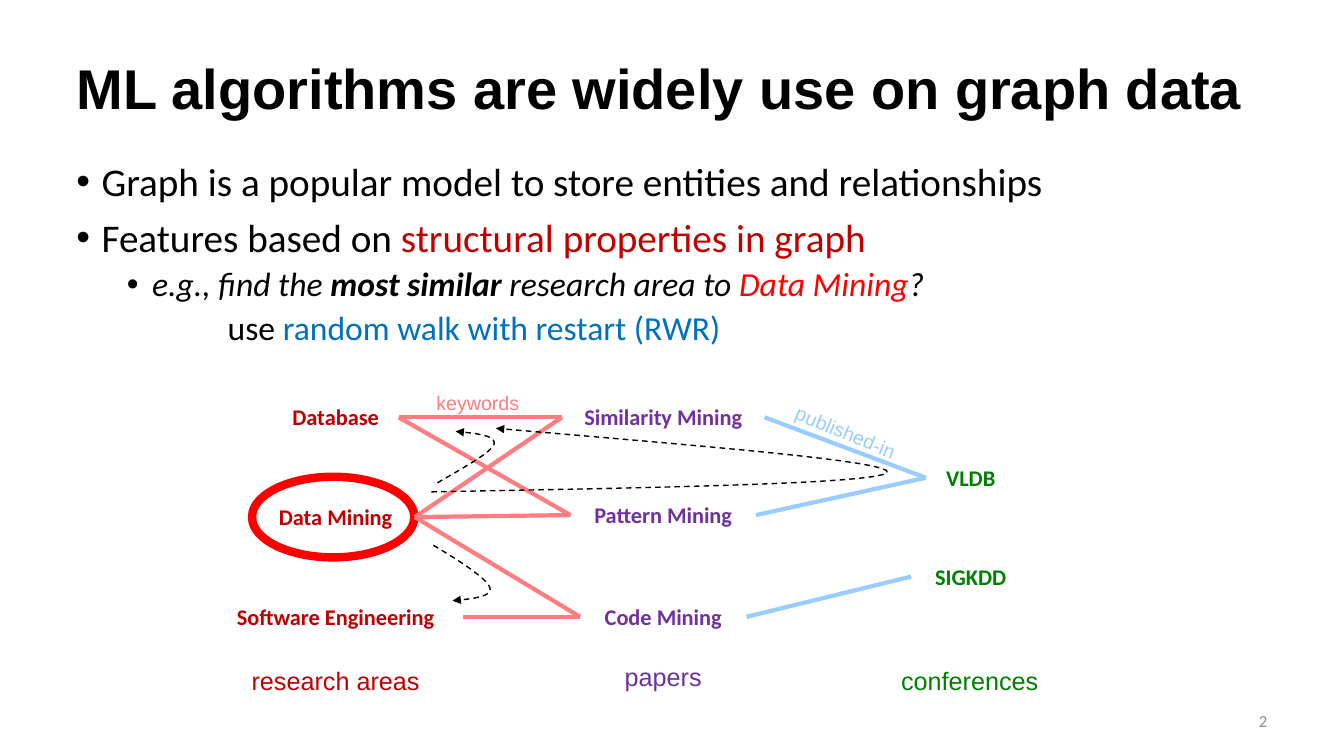
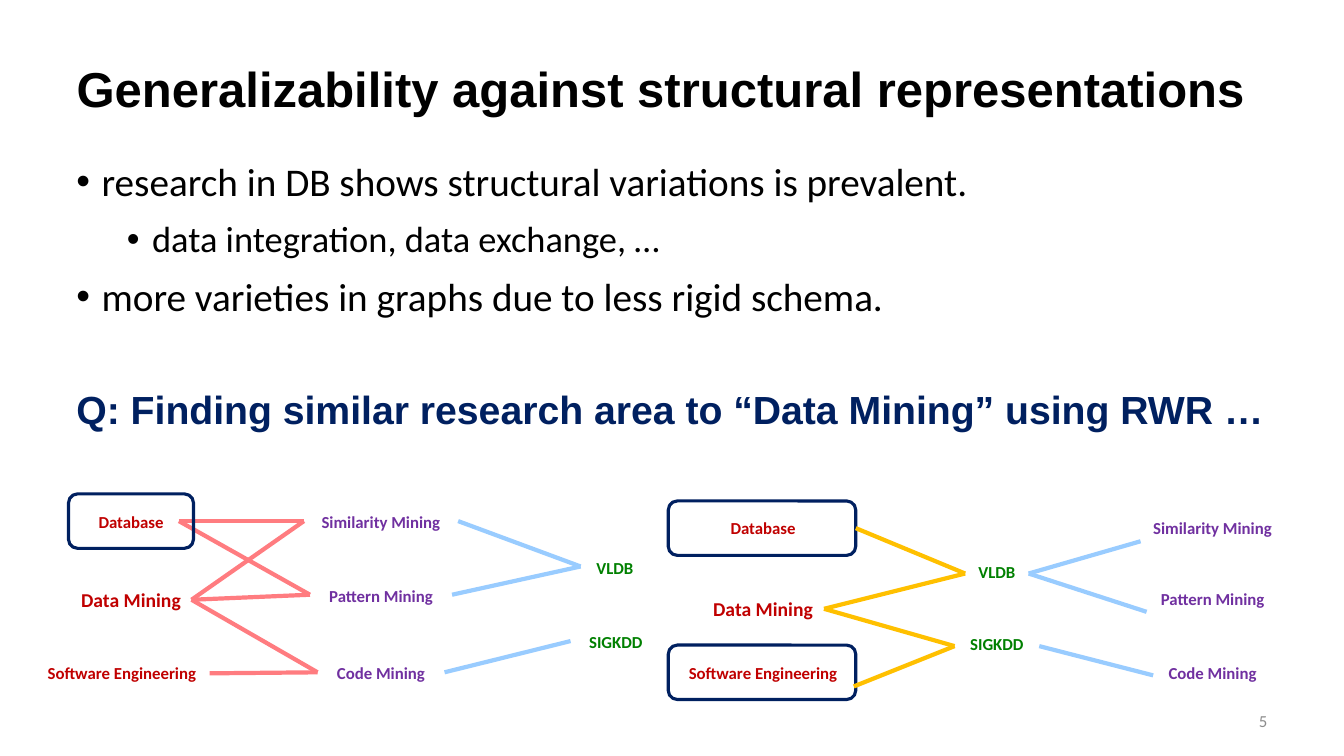
"""Builds two slides on graph data, each with a title, bullets and node graphs."""
from dataclasses import dataclass
from typing import NamedTuple

from pptx import Presentation
from pptx.dml.color import RGBColor as Rgb
from pptx.enum.dml import MSO_LINE as Dash
from pptx.enum.shapes import MSO_CONNECTOR as Conn, MSO_SHAPE as Kind
from pptx.enum.text import MSO_ANCHOR as Anchor, MSO_AUTO_SIZE as Auto, PP_ALIGN as Align
from pptx.oxml.ns import qn
from pptx.shapes.base import BaseShape
from pptx.slide import Slide
from pptx.text.text import _Paragraph as Para, _Run as Run
from pptx.util import Inches, Pt
from lxml.etree import SubElement as Sub

CELL = Inches(0.1)
COLS, ROWS = 133.33, 75
LEFT, WIDE = 6.6, 120.1
HUES = {
    "black": "000000", "gray": "8C8C8C", "area": "C00000", "paper": "7030A0",
    "venue": "008000", "red": "FF0000", "blue": "0070C0", "navy": "002060",
    "pink": "FF7C80", "sky": "99CCFF", "gold": "FFC000",
}


class Spot(NamedTuple):
    x: float
    y: float


@dataclass(frozen=True)
class Bit:
    text: str
    hue: str = "black"
    bold: bool = False
    slant: bool = False
    font: str = "Calibri"


@dataclass(frozen=True)
class Item:
    bits: tuple[Bit, ...]
    size: int = 28
    gap: int = 10
    margin: float = 0.25
    dot: bool = True


@dataclass(frozen=True)
class Node:
    text: str
    x: float
    y: float
    wide: float
    tall: float
    hue: str
    size: int


@dataclass(frozen=True)
class Edge:
    start: str
    end: str
    hue: str


@dataclass(frozen=True)
class Note(Node):
    turn: float = 0


@dataclass(frozen=True)
class Frame:
    x: float
    y: float
    wide: float
    tall: float = 5.4


DB, DM, SE = "Database", "Data Mining", "Software Engineering"
SIM, PAT, CODE = "Similarity Mining", "Pattern Mining", "Code Mining"
VLDB, KDD = "VLDB", "SIGKDD"

EDGES = (
    Edge(DB, SIM, "pink"), Edge(DM, SIM, "pink"), Edge(SE, CODE, "pink"),
    Edge(DM, CODE, "pink"), Edge(DM, PAT, "pink"), Edge(SIM, VLDB, "sky"),
    Edge(PAT, VLDB, "sky"), Edge(CODE, KDD, "sky"), Edge(DB, PAT, "pink"),
)
FLIPS = (
    Edge(DM, VLDB, "gold"), Edge(DM, KDD, "gold"), Edge(VLDB, SIM, "sky"),
    Edge(VLDB, PAT, "sky"), Edge(KDD, CODE, "sky"),
)

MAIN = (
    Node(DB, 33.3, 41.4, 12.5, 3.7, "area", 16),
    Node(DM, 33.3, 51.3, 15.7, 3.7, "area", 16),
    Node(SE, 33.3, 61.2, 25.2, 3.7, "area", 16),
    Node(SIM, 65.8, 41.4, 20.1, 3.7, "paper", 16),
    Node(PAT, 65.8, 51.1, 18.4, 3.7, "paper", 16),
    Node(CODE, 65.8, 61.2, 16.5, 3.7, "paper", 16),
    Node(VLDB, 96.3, 47.4, 8.9, 3.7, "venue", 16),
    Node(KDD, 96.3, 57.2, 11.8, 3.7, "venue", 16),
)
FORM = (
    Node(DB, 13, 51.7, 9.5, 2.8, "area", 12),
    Node(DM, 13, 59.5, 12, 3.4, "area", 14),
    Node(SE, 12.1, 66.8, 17.4, 3, "area", 12),
    Node(SIM, 37.8, 51.7, 15.3, 2.8, "paper", 12),
    Node(PAT, 37.8, 59, 14.1, 2.8, "paper", 12),
    Node(CODE, 37.8, 66.7, 12.6, 2.8, "paper", 12),
    Node(VLDB, 61, 56.2, 6.8, 2.8, "venue", 12),
    Node(KDD, 61.1, 63.6, 9, 2.8, "venue", 12),
)
TWIN = (
    Node(DB, 75.7, 53.7, 8.9, 5.6, "area", 12),
    Node(DM, 75.7, 60.4, 12.1, 3.4, "area", 14),
    Node(SE, 75.7, 68.1, 17.9, 5.6, "area", 12),
    Node(SIM, 120.3, 53.7, 14.3, 5.6, "paper", 12),
    Node(PAT, 120.3, 60.7, 13.1, 5.6, "paper", 12),
    Node(CODE, 120.3, 67, 11.8, 3.4, "paper", 12),
    Node(VLDB, 98.9, 56.9, 6.3, 3.4, "venue", 12),
    Node(KDD, 98.9, 64.1, 8.4, 3.4, "venue", 12),
)
NOTES = (
    Note("research areas", 33.3, 67.5, 20.4, 4, "area", 18),
    Note("papers", 65.8, 67.1, 20.4, 4, "paper", 18),
    Note("conferences", 96.2, 67.5, 20.4, 4, "venue", 18),
    Note("keywords", 47.4, 40, 14.5, 3.4, "pink", 14),
    Note("published-in", 83.9, 42.9, 14.5, 3.4, "sky", 14, 22.6),
)
WALKS = (
    (Spot(43.4, 47.9), Spot(46, 46.4), Spot(48.7, 44.9), Spot(49, 44.1),
     Spot(49.3, 43.2), Spot(47.3, 43), Spot(45.2, 42.8)),
    (Spot(42.8, 48.8), Spot(64.8, 48.4), Spot(86.9, 48), Spot(88, 46.9),
     Spot(89.1, 45.8), Spot(69.1, 44.2), Spot(49.2, 42.5)),
    (Spot(43, 54.1), Spot(45.7, 55.7), Spot(48.3, 57.4), Spot(48.6, 58.3),
     Spot(48.9, 59.2), Spot(46.9, 59.4), Spot(44.9, 59.6)),
)
USES = (
    Item((Bit("Graph is a popular model to store entities and relationships"),)),
    Item((Bit("Features based on "), Bit("structural properties in graph", "area"))),
    Item((Bit("e.g., find the ", slant=True), Bit("most similar ", bold=True, slant=True),
          Bit("research area to ", slant=True), Bit("Data Mining", "red", slant=True),
          Bit("?", slant=True)), 24, 5, 0.75),
    Item((Bit("use "), Bit("random walk with restart (RWR)", "blue")), 24, 5, 1.5, False),
)
FORMS = (
    Item((Bit("research in DB shows structural variations is prevalent."),), gap=12),
    Item((Bit("data integration, data exchange, …"),), 26, 12, 0.75),
    Item((Bit("more varieties in graphs due to less rigid schema."),), gap=12),
    Item((Bit("Q: Finding similar research area to “Data Mining” using RWR …",
              "navy", True, font="Arial"),), gap=51, margin=0, dot=False),
)


def cell(num: float) -> int:
    return round(num * CELL)


def tint(name: str) -> Rgb:
    return Rgb.from_string(HUES[name])


def style(run: Run, size: int, hue: str, font: str = "Calibri",
          bold: bool = False, slant: bool = False) -> None:
    face = run.font
    face.size, face.name, face.bold, face.italic = Pt(size), font, bold, slant
    face.color.rgb = tint(hue)


def text_at(page: Slide, x: float, y: float, wide: float, tall: float) -> BaseShape:
    box = page.shapes.add_textbox(cell(x), cell(y), cell(wide), cell(tall))
    box.text_frame.word_wrap = True
    return box


def label(page: Slide, mark: Node, font: str, bold: bool) -> BaseShape:
    box = text_at(page, mark.x - mark.wide / 2, mark.y - mark.tall / 2, mark.wide, mark.tall)
    box.text_frame.text = mark.text
    para = box.text_frame.paragraphs[0]
    para.alignment = Align.CENTER
    style(para.runs[0], mark.size, mark.hue, font, bold)
    return box


def outline(page: Slide, kind: Kind, spot: Frame, hue: str, width: float) -> BaseShape:
    shape = page.shapes.add_shape(
        kind, cell(spot.x), cell(spot.y), cell(spot.wide), cell(spot.tall))
    shape.shadow.inherit = False
    shape.fill.background()
    shape.line.color.rgb, shape.line.width = tint(hue), Pt(width)
    return shape


def link(page: Slide, start: BaseShape | Spot, end: BaseShape, hue: str) -> None:
    from_x, from_y = (cell(start.x), cell(start.y)) if isinstance(start, Spot) else (0, 0)
    line = page.shapes.add_connector(Conn.STRAIGHT, from_x, from_y, 0, 0)
    if not isinstance(start, Spot):
        line.begin_connect(start, 3)
    line.end_connect(end, 1)
    line.line.color.rgb, line.line.width = tint(hue), Pt(3)
    Sub(line._element.spPr, qn("a:effectLst"))


def graph(page: Slide, nodes: tuple[Node, ...], edges: tuple[Edge, ...]) -> dict[str, BaseShape]:
    boxes = {node.text: label(page, node, "Calibri", True) for node in nodes}
    for edge in edges:
        link(page, boxes[edge.start], boxes[edge.end], edge.hue)
    return boxes


def bend(a: Spot, b: Spot, c: Spot, d: Spot, steps: int = 16) -> list[tuple[int, int]]:
    dots = []
    for step in range(1, steps + 1):
        t = step / steps
        mix = ((1 - t) ** 3, 3 * t * (1 - t) ** 2, 3 * t * t * (1 - t), t ** 3)
        dots.append((cell(sum(m * p.x for m, p in zip(mix, (a, b, c, d)))),
                     cell(sum(m * p.y for m, p in zip(mix, (a, b, c, d))))))
    return dots


def walk(page: Slide, knots: tuple[Spot, ...]) -> None:
    pen = page.shapes.build_freeform(cell(knots[0].x), cell(knots[0].y))
    pen.add_line_segments(bend(*knots[:4]) + bend(*knots[3:]), close=False)
    curve = pen.convert_to_shape()
    curve.shadow.inherit = False
    curve.fill.background()
    curve.line.color.rgb, curve.line.width = tint("black"), Pt(1)
    curve.line.dash_style = Dash.DASH
    Sub(curve.line._get_or_add_ln(), qn("a:tailEnd"), type="triangle")


def bullet(para: Para, item: Item) -> None:
    para.line_spacing, para.space_before = 0.9, Pt(item.gap)
    props = para._p.get_or_add_pPr()
    props.set("marL", str(Inches(item.margin)))
    props.set("indent", str(Inches(-0.25 if item.dot else 0)))
    if item.dot:
        Sub(props, qn("a:buFont"), typeface="Arial")
        Sub(props, qn("a:buChar"), char="•")
    for bit in item.bits:
        run = para.add_run()
        run.text = bit.text
        style(run, item.size, bit.hue, bit.font, bit.bold, bit.slant)


def start(deck: Presentation, title: str, size: int, items: tuple[Item, ...], num: str) -> Slide:
    page = deck.slides.add_slide(deck.slide_layouts[5])
    head = page.shapes.title
    head.left, head.top, head.width, head.height = map(cell, (LEFT, 4, WIDE, 10.1))
    frame = head.text_frame
    frame.text = title
    frame.word_wrap, frame.auto_size, frame.vertical_anchor = True, Auto.NONE, Anchor.MIDDLE
    para = frame.paragraphs[0]
    para.alignment, para.line_spacing = Align.LEFT, 0.9
    style(para.runs[0], size, "black", "Arial", True)
    body = text_at(page, LEFT, 15.6, WIDE, 52).text_frame
    for rank, item in enumerate(items):
        bullet(body.add_paragraph() if rank else body.paragraphs[0], item)
    foot = text_at(page, LEFT + WIDE - 32.5, 69.5, 32.5, 4).text_frame
    foot.text, foot.vertical_anchor = num, Anchor.MIDDLE
    foot.paragraphs[0].alignment = Align.RIGHT
    style(foot.paragraphs[0].runs[0], 12, "gray")
    return page


def main() -> None:
    deck = Presentation()
    deck.slide_width, deck.slide_height = cell(COLS), cell(ROWS)

    page = start(deck, "ML algorithms are widely use on graph data", 40, USES, "2")
    outline(page, Kind.OVAL, Frame(25, 47.3, 16.1, 8), "red", 6)
    for note in NOTES:
        label(page, note, "Arial", False).rotation = note.turn
    graph(page, MAIN, EDGES)
    for knots in WALKS:
        walk(page, knots)

    page = start(deck, "Generalizability against structural representations", 35, FORMS, "5")
    boxes = graph(page, TWIN, FLIPS)
    graph(page, FORM, EDGES)
    spots = (Frame(6.8, 49, 12.4), Frame(66.3, 64, 18.6), Frame(66.3, 49.7, 18.6))
    *_, top = [outline(page, Kind.ROUNDED_RECTANGLE, spot, "navy", 2.25) for spot in spots]
    link(page, top, boxes[VLDB], "gold")
    link(page, Spot(84.7, 68.1), boxes[KDD], "gold")
    deck.save("out.pptx")


if __name__ == "__main__":
    main()
